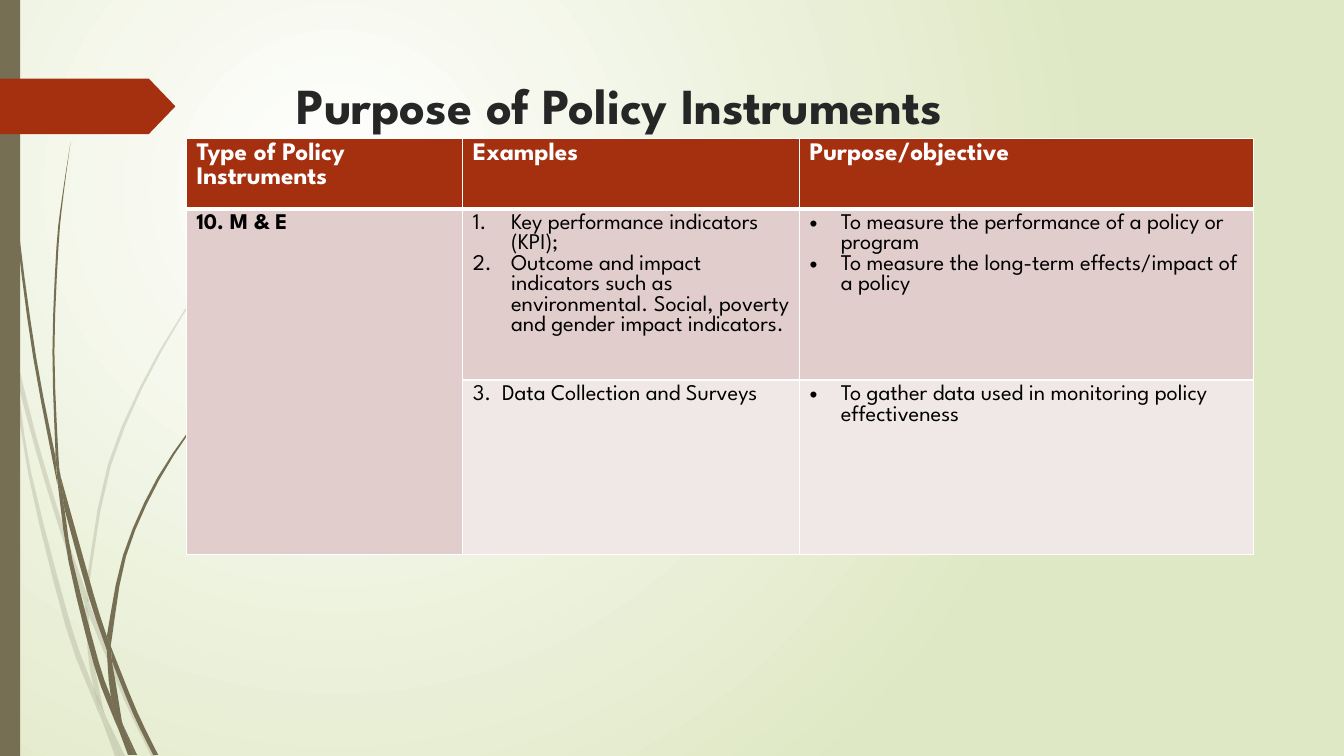
import dataclasses

import lxml.etree
import pptx
import pptx.dml.color
import pptx.enum.shapes
import pptx.enum.text
import pptx.oxml.ns
import pptx.util

Inches = pptx.util.Inches
Pt = pptx.util.Pt
qn = pptx.oxml.ns.qn
RGB = pptx.dml.color.RGBColor.from_string


@dataclasses.dataclass(frozen=True)
class Theme:
    font: str = "League Spartan"
    bullet_font: str = "Arial"
    title_size: int = 36
    header_size: int = 18
    body_size: int = 16
    background_center: str = "FFFFFF"
    background_edge: str = "DFE8C4"
    olive: str = "766F54"
    rust: str = "A53010"
    title_text: str = "262626"
    header_text: str = "FFFFFF"
    body_text: str = "000000"
    border: str = "FFFFFF"
    row_dark: str = "E1CDCC"
    row_light: str = "F0E8E7"


theme = Theme()


def smooth_edge(points, steps=3):
    """Return points of a Catmull-Rom curve running through the given points."""
    padded = [points[0], *points, points[-1]]
    curve = [points[0]]
    for a, b, c, d in zip(padded, padded[1:], padded[2:], padded[3:]):
        for step in range(1, steps + 1):
            t = step / steps
            curve.append(tuple(
                (2 * q + (r - p) * t + (2 * p - 5 * q + 4 * r - s) * t ** 2
                 + (3 * q - p - 3 * r + s) * t ** 3) / 2
                for p, q, r, s in zip(a, b, c, d)))
    return curve


def paint(shape, color):
    shape.fill.solid()
    shape.fill.fore_color.rgb = RGB(color)
    shape.line.fill.background()
    shape.shadow.inherit = False


presentation = pptx.Presentation()
presentation.slide_width = Inches(13.33)
presentation.slide_height = Inches(7.5)
slide = presentation.slides.add_slide(presentation.slide_layouts[6])

# Background: radial gradient centred in the upper left
background = slide.background.fill
background.gradient()
for stop, color in zip(background.gradient_stops,
                       (theme.background_center, theme.background_edge)):
    stop.color.rgb = RGB(color)
gradient = slide.element.find(".//" + qn("a:gradFill"))
gradient.remove(gradient.find(qn("a:lin")))
radial = lxml.etree.SubElement(gradient, qn("a:path"), path="circle")
lxml.etree.SubElement(radial, qn("a:fillToRect"),
                      l="50000", t="50000", r="100000", b="100000")

# Grass: each blade piece is one edge and the opposite edge back
pale_blades = [
    ([(0.11, 3.5), (0.09, 3.22), (0, 2.82)], [(0, 2.99), (0.1, 3.44), (0.11, 3.5)]),
    ([(0.14, 3.45), (0.36, 4.33), (0.62, 5.2), (0.85, 5.86)],
     [(0.84, 5.99), (0.58, 5.22), (0.36, 4.49), (0.17, 3.76), (0.14, 3.45)]),
    ([(0.88, 5.96), (0.92, 6.07), (1.27, 6.92), (1.55, 7.5)],
     [(1.5, 7.5), (1.23, 6.94), (0.88, 6.1)]),
    ([(1.05, 7.11), (1.24, 7.5)], [(1.19, 7.5), (1.05, 7.11)]),
    ([(0.11, 3.5), (0.17, 3.76), (0.31, 4.69), (0.7, 6.19), (0.93, 6.83), (0.99, 7.07)],
     [(1.01, 7.14), (0.92, 6.93), (0.65, 6.21), (0.28, 4.7), (0.11, 3.5)]),
    ([(0.84, 5.99), (0.87, 6.46), (0.93, 6.83), (1.05, 7.11)],
     [(1.03, 7.06), (0.91, 6.46), (0.88, 6.1), (0.84, 5.99)]),
    ([(3.12, 1.53), (2.68, 1.97), (2.28, 2.44), (1.58, 3.48), (1.07, 4.61), (0.85, 5.84)],
     [(0.88, 5.96), (0.88, 5.84), (1.1, 4.62), (1.6, 3.49), (2.29, 2.45), (3.12, 1.54)]),
    ([(1.01, 7.14), (1.14, 7.5)], [(1.19, 7.5), (1.01, 7.14)]),
    ([(0.84, 5.99), (0.88, 6.1)], [(0.88, 5.96), (0.85, 5.86)]),
    ([(0.93, 6.83), (1.05, 7.11), (1.19, 7.5)], [(1.01, 7.14), (0.93, 6.83)]),
]
dark_blades = [
    ([(0.04, 0), (0.05, 0.48), (0.08, 1.09), (0.19, 2.32), (0.36, 3.55), (0.55, 4.53)],
     [(0.57, 4.81), (0.33, 3.55), (0.17, 2.33), (0.07, 1.1), (0.04, 0.48), (0.03, 0)]),
    ([(0.6, 4.72), (0.93, 5.9), (1.06, 6.31)], [(1.06, 6.45), (0.88, 5.92), (0.64, 5.05)]),
    ([(1.1, 6.41), (1.13, 6.49), (1.36, 7.06), (1.57, 7.49)],
     [(1.52, 7.49), (1.32, 7.08), (1.11, 6.56)]),
    ([(0.57, 4.77), (0.64, 5.05), (0.72, 5.56), (0.98, 6.57), (1.1, 6.91)],
     [(1.17, 7.22), (1.11, 7.08), (0.93, 6.59), (0.68, 5.57), (0.57, 4.77)]),
    ([(0.7, 1.41), (0.63, 1.93), (0.58, 2.45), (0.54, 3.49), (0.58, 4.53), (0.6, 4.72)],
     [(0.55, 4.49), (0.52, 3.49), (0.56, 2.45), (0.62, 1.93), (0.7, 1.41)]),
    ([(1.22, 7.19), (1.36, 7.49)], [(1.33, 7.49), (1.22, 7.19)]),
    ([(0.55, 4.49), (0.6, 4.72), (0.64, 5.05)], [(0.57, 4.77), (0.55, 4.53)]),
    ([(2.6, 3.44), (2.31, 3.73), (2.04, 4.05), (1.56, 4.74), (1.22, 5.51), (1.06, 6.31)],
     [(1.1, 6.41), (1.11, 6.33), (1.25, 5.52), (1.58, 4.76), (2.05, 4.06), (2.61, 3.44)]),
    ([(1.17, 7.22), (1.31, 7.49)], [(1.27, 7.49), (1.17, 7.22)]),
    ([(1.06, 6.45), (1.1, 6.91), (1.22, 7.19)], [(1.21, 7.16), (1.11, 6.56), (1.06, 6.45)]),
    ([(1.06, 6.31), (1.06, 6.45)], [(1.11, 6.56), (1.1, 6.41)]),
    ([(1.1, 6.91), (1.22, 7.19), (1.33, 7.49)], [(1.3, 7.49), (1.17, 7.22), (1.1, 6.91)]),
]
for blades, opacity in ((pale_blades, 20), (dark_blades, 100)):
    for edge, edge_back in blades:
        outline = [(Inches(x), Inches(y)) for x, y in smooth_edge(edge) + smooth_edge(edge_back)]
        builder = slide.shapes.build_freeform(*outline[0])
        builder.add_line_segments(outline[1:], close=True)
        blade = builder.convert_to_shape()
        paint(blade, theme.olive)
        color_element = blade.element.spPr.find(".//" + qn("a:srgbClr"))
        lxml.etree.SubElement(color_element, qn("a:alpha"), val=str(opacity * 1000))

side_bar = slide.shapes.add_shape(
    pptx.enum.shapes.MSO_SHAPE.RECTANGLE, 0, 0, Inches(0.2), Inches(7.5))
paint(side_bar, theme.olive)
arrow_tab = slide.shapes.add_shape(
    pptx.enum.shapes.MSO_SHAPE.PENTAGON, 0, Inches(0.78), Inches(1.74), Inches(0.55))
arrow_tab.adjustments[0] = 0.48
paint(arrow_tab, theme.rust)

title = slide.shapes.add_textbox(Inches(2.84), Inches(0.68), Inches(9.75), Inches(0.99))
title_frame = title.text_frame
title_frame.word_wrap = True
title_frame.vertical_anchor = pptx.enum.text.MSO_ANCHOR.MIDDLE
title_frame.margin_bottom = Inches(0.33)
title_frame.text = "Purpose of Policy Instruments"
title_font = title_frame.paragraphs[0].runs[0].font
title_font.name, title_font.size, title_font.bold = theme.font, Pt(theme.title_size), True
title_font.color.rgb = RGB(theme.title_text)

# Table: each cell is its text and its list style
rows = [
    [("Type of Policy Instruments", None), ("Examples", None), ("Purpose/objective", None)],
    [("10. M & E", None),
     ("Key performance indicators (KPI);\nOutcome and impact indicators such as "
      "environmental. Social, poverty and gender impact indicators.", "number"),
     ("To measure the performance of a policy or program\n"
      "To measure the long-term effects/impact of a policy", "bullet")],
    [("", None), ("3.\tData Collection and Surveys", "typed"),
     ("To gather data used in monitoring policy effectiveness", "bullet")],
]
list_styles = {
    "number": (0.38, [("a:buAutoNum", {"type": "arabicPeriod"})]),
    "bullet": (0.31, [("a:buFont", {"typeface": theme.bullet_font}), ("a:buChar", {"char": "•"})]),
    "typed": (0.29, [("a:buNone", {})])}
row_fills = [theme.rust, theme.row_dark, theme.row_light]
table = slide.shapes.add_table(
    3, 3, Inches(1.85), Inches(1.37), Inches(10.58), Inches(3.68)).table
for column, width in zip(table.columns, (2.74, 3.34, 4.5)):
    column.width = Inches(width)
for row, height in zip(table.rows, (0.7, 1.25, 1.73)):
    row.height = Inches(height)
table.cell(1, 0).merge(table.cell(2, 0))

for row_index, row in enumerate(rows):
    is_header = row_index == 0
    for column_index, (text, list_style) in enumerate(row):
        cell = table.cell(row_index, column_index)
        cell.fill.solid()
        cell.fill.fore_color.rgb = RGB(row_fills[row_index])
        properties = cell._tc.get_or_add_tcPr()
        for position, side in enumerate("LRTB"):
            heavy = (row_index, side) in ((0, "B"), (1, "T"))
            line = lxml.etree.Element(qn("a:ln" + side), w=str(Pt(3 if heavy else 1)))
            line_fill = lxml.etree.SubElement(line, qn("a:solidFill"))
            lxml.etree.SubElement(line_fill, qn("a:srgbClr"), val=theme.border)
            properties.insert(position, line)
        if cell.is_spanned:
            continue
        cell.text_frame.text = text
        for paragraph in cell.text_frame.paragraphs:
            if list_style:
                indent, marks = list_styles[list_style]
                paragraph_properties = paragraph._p.get_or_add_pPr()
                paragraph_properties.set("marL", str(Inches(indent)))
                paragraph_properties.set("indent", str(-Inches(indent)))
                for tag, attributes in marks:
                    lxml.etree.SubElement(paragraph_properties, qn(tag), attributes)
            font = paragraph.runs[0].font
            font.name = theme.font
            font.size = Pt(theme.header_size if is_header else theme.body_size)
            font.bold = is_header or column_index == 0
            font.color.rgb = RGB(theme.header_text if is_header else theme.body_text)

presentation.save("out.pptx")
